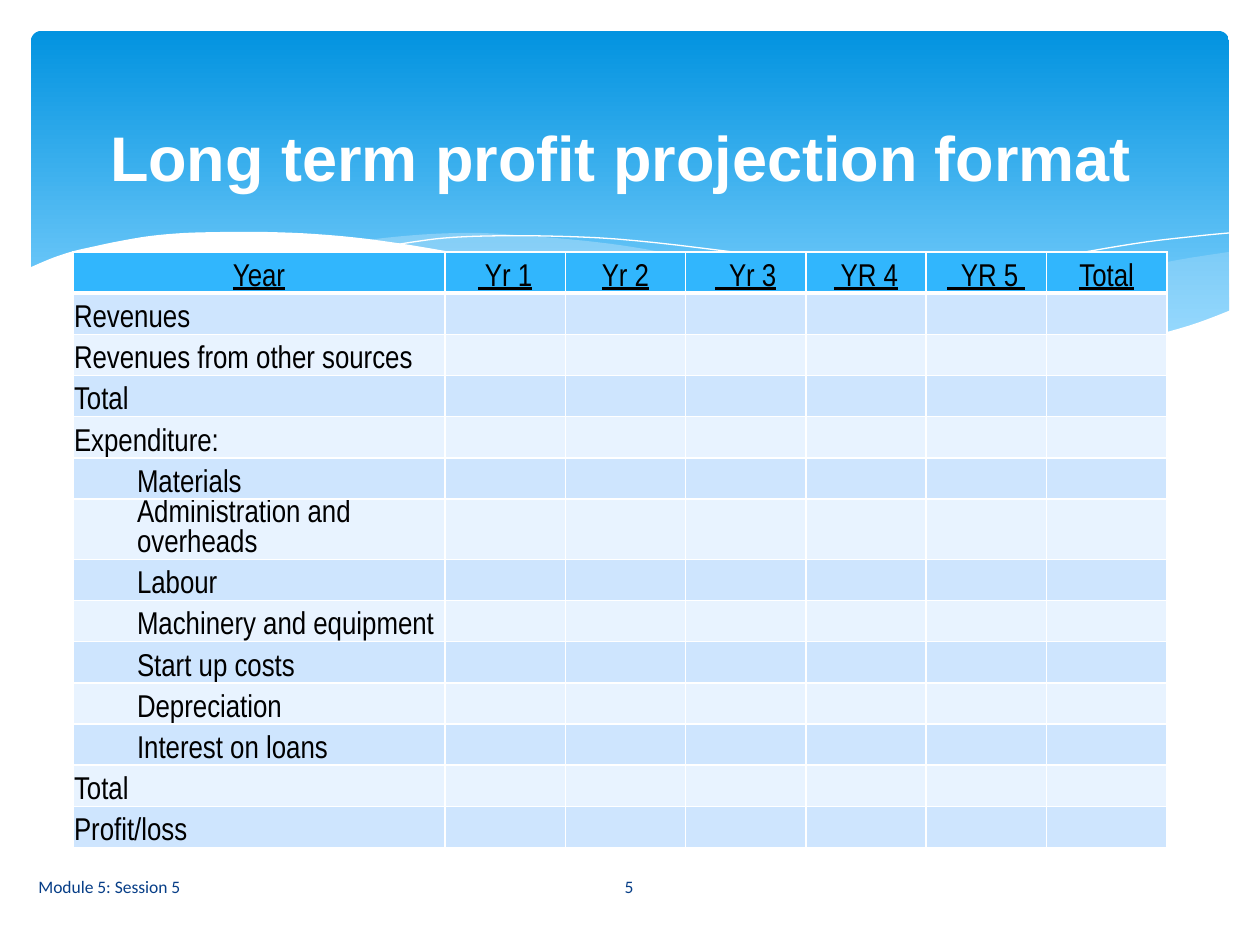
from lxml.etree import SubElement
from pptx import Presentation
from pptx.dml.color import RGBColor
from pptx.enum.shapes import MSO_SHAPE as Shape
from pptx.enum.text import MSO_ANCHOR as Anchor, PP_ALIGN as Align
from pptx.oxml.ns import qn
from pptx.util import Pt

# Content
TITLE = "Long term profit projection format"
FOOTER, PAGE = "Module 5: Session 5", "5"
HEAD = ["Year", " Yr 1", "Yr 2", "  Yr 3", " YR 4", "  YR 5 ", "Total"]
ROWS = [  # label, indent level
    ("Revenues", 0), ("Revenues from other sources", 0), ("Total", 0),
    ("Expenditure:", 0), ("Materials", 1), ("Administration and overheads", 1),
    ("Labour", 1), ("Machinery and equipment", 1), ("Start up costs", 1),
    ("Depreciation", 1), ("Interest on loans", 1), ("Total", 0),
    ("Profit/loss", 0),
]

# Waves: each is a list of smooth edges, given by knots in px
RIGHT = [
    [(1229, 252), (1178, 260), (1125, 271), (1085, 281), (1014, 299),
     (949, 313), (890, 324), (833, 334)],
    [(833, 334), (888, 341), (939, 346), (984, 349), (1038, 350),
     (1088, 348), (1130, 343), (1169, 334), (1196, 324), (1230, 311)],
]
MIDDLE = [
    [(1125, 344), (1055, 334), (977, 320), (890, 302), (793, 280), (736, 266),
     (682, 256), (632, 247), (586, 241), (529, 236), (479, 233), (433, 234),
     (394, 237), (360, 241)],
    [(360, 241), (431, 251), (509, 266), (566, 280), (668, 302), (757, 321),
     (838, 335), (910, 345), (974, 350), (1031, 350), (1080, 349),
     (1125, 344)],
]
LEFT_LINE = [
    [(389, 246), (413, 242), (445, 238), (487, 236), (546, 236), (616, 239),
     (701, 248), (801, 262), (916, 285), (1047, 316), (1143, 343)],
]
RIGHT_LINE = [
    [(772, 324), (823, 310), (876, 296), (942, 281), (1016, 265), (1091, 251),
     (1146, 242), (1198, 236), (1229, 233)],
]
FRONT = [
    [(1231, 310), (1197, 323), (1159, 334), (1118, 342), (1071, 347),
     (1019, 349), (959, 347), (892, 343), (816, 334), (730, 320), (634, 302),
     (563, 277), (492, 260), (428, 248), (368, 239), (315, 234), (266, 232),
     (223, 232), (184, 233), (150, 236), (120, 241), (96, 246), (74, 251),
     (58, 256), (45, 261), (29, 268)],
    [(29, 415), (1231, 415)],
]

THEME = {
    "top": "0293E0", "foot": "83D3FE", "wave": "C6E7FC", "white": "FFFFFF",
    "head": "31B6FD", "bands": ("CEE5FE", "E8F3FF"), "ink": "000000",
    "note": "073E87", "title_pt": 36, "cell_pt": 18, "note_pt": 10,
}


def px(n):
    return round(n * 914400 / 126)


def rgb(code):
    return RGBColor.from_string(code)


def write(frame, text, *, size, color, font, bold=False, under=False,
          align=Align.LEFT, anchor=Anchor.MIDDLE, level=0):
    frame.word_wrap = True
    frame.vertical_anchor = anchor
    para = frame.paragraphs[0]
    para.alignment = align
    if level:
        para.level = level
        para._p.get_or_add_pPr().set("marL", str(px(63 * level)))
    run = para.add_run()
    run.text = text
    face = run.font
    face.name, face.size, face.bold, face.underline = font, Pt(size), bold, under
    face.color.rgb = rgb(color)


def label(slide, box, text, **style):
    area = slide.shapes.add_textbox(*map(px, box))
    write(area.text_frame, text, **style)


def smooth(knots, steps=4):
    """Catmull-Rom points through the knots; two knots stay a straight line."""
    if len(knots) < 3:
        return knots
    ends = [knots[0], *knots, knots[-1]]
    out = [knots[0]]
    for a, b, c, d in zip(ends, ends[1:], ends[2:], ends[3:]):
        for t in (i / steps for i in range(1, steps + 1)):
            out.append(tuple(
                (2 * q + (r - p) * t + (2 * p - 5 * q + 4 * r - s) * t ** 2
                 + (3 * q - p - 3 * r + s) * t ** 3) / 2
                for p, q, r, s in zip(a, b, c, d)))
    return out


def wave(slide, edges, fill=None, alpha=100):
    dots = [(px(x), px(y)) for edge in edges for x, y in smooth(edge)]
    pen = slide.shapes.build_freeform(*dots[0], scale=1.0)
    pen.add_line_segments(dots[1:], close=bool(fill))
    shape = pen.convert_to_shape()
    shape.shadow.inherit = False
    if fill:
        shape.fill.solid()
        shape.fill.fore_color.rgb = rgb(fill)
        shape.line.fill.background()
        if alpha < 100:
            tint = shape.fill._xPr.find(qn("a:solidFill"))[0]
            SubElement(tint, qn("a:alpha"), val=str(alpha * 1000))
    else:
        shape.fill.background()
        shape.line.color.rgb = rgb(THEME["white"])
        shape.line.width = Pt(0)


def banner(slide):
    shape = slide.shapes.add_shape(Shape.ROUNDED_RECTANGLE,
                                   *map(px, (31, 31, 1198, 340)))
    shape.adjustments[0] = 0.03
    shape.shadow.inherit = False
    shape.line.fill.background()
    shape.fill.gradient()
    shape.fill.gradient_angle = 270
    stops = shape.fill.gradient_stops
    for stop, key, spot in zip(stops, ("top", "foot"), (0, 0.9)):
        stop.color.rgb = rgb(THEME[key])
        stop.position = spot


def paint(cell, fill, top, base):
    cell.margin_left = cell.margin_right = cell.margin_top = px(1)
    cell.margin_bottom = 0
    props = cell._tc.get_or_add_tcPr()
    for side, width in (("L", 1), ("R", 1), ("T", top), ("B", base)):
        line = SubElement(props, qn(f"a:ln{side}"), w=str(Pt(width)))
        solid = SubElement(line, qn("a:solidFill"))
        SubElement(solid, qn("a:srgbClr"), val=THEME["white"])
    cell.fill.solid()
    cell.fill.fore_color.rgb = rgb(fill)


def grid(slide):
    count, wide, tall = len(ROWS) + 1, 1094, 577
    first = 372
    table = slide.shapes.add_table(count, len(HEAD),
                                   *map(px, (73, 252, wide, tall))).table
    table.first_row = table.horz_banding = False
    for i, col in enumerate(table.columns):
        col.width = px((wide - first) / (len(HEAD) - 1) if i else first)
    for row in table.rows:
        row.height = px(tall / count)
    style = dict(size=THEME["cell_pt"], color=THEME["ink"],
                 font="Arial Narrow", anchor=Anchor.BOTTOM)
    for c, name in enumerate(HEAD):
        cell = table.cell(0, c)
        paint(cell, THEME["head"], 1, 3)
        write(cell.text_frame, name, under=True, align=Align.CENTER, **style)
        cell.vertical_anchor = Anchor.BOTTOM
    for r, (name, level) in enumerate(ROWS, 1):
        for c in range(len(HEAD)):
            paint(table.cell(r, c), THEME["bands"][(r - 1) % 2],
                  3 if r == 1 else 1, 1)
        cell = table.cell(r, 0)
        write(cell.text_frame, name, level=level, **style)
        cell.vertical_anchor = Anchor.BOTTOM


def main():
    deck = Presentation()
    deck.slide_width, deck.slide_height = px(1260), px(945)
    slide = deck.slides.add_slide(deck.slide_layouts[6])

    # Backdrop
    banner(slide)
    wave(slide, RIGHT, THEME["wave"], 29)
    wave(slide, MIDDLE, THEME["wave"], 40)
    wave(slide, LEFT_LINE)
    wave(slide, RIGHT_LINE)
    wave(slide, FRONT, THEME["white"])

    # Table, title and footer
    grid(slide)
    label(slide, (57, 70, 1128, 173), TITLE, size=THEME["title_pt"],
          color=THEME["white"], font="Arial", bold=True, align=Align.CENTER)
    note = dict(size=THEME["note_pt"], color=THEME["note"], font="Calibri")
    label(slide, (26, 862, 522, 50), FOOTER, **note)
    label(slide, (549, 862, 160, 50), PAGE, align=Align.CENTER, **note)

    deck.save("out.pptx")


if __name__ == "__main__":
    main()
